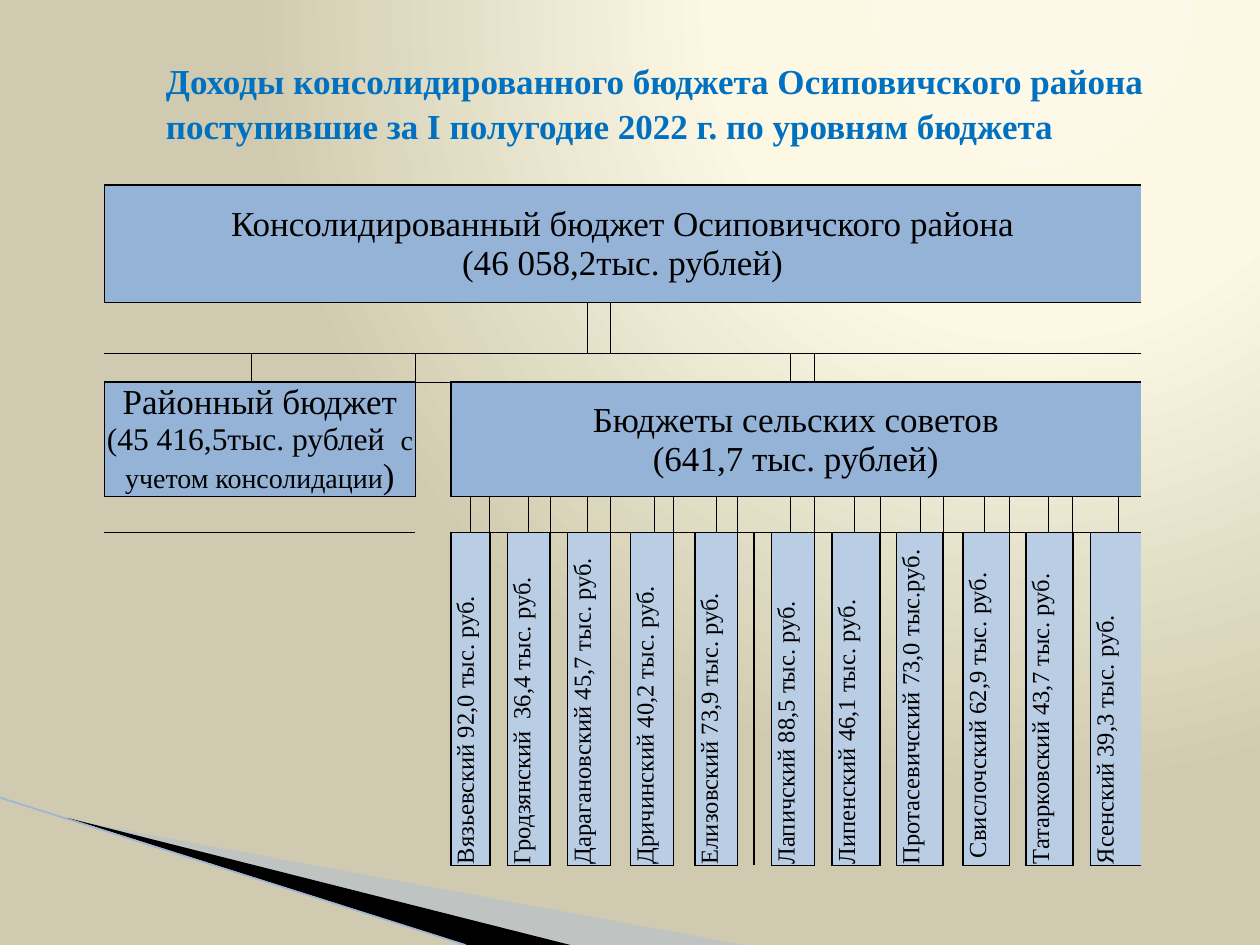
from collections import defaultdict

from lxml import etree
from pptx import Presentation
from pptx.dml.color import RGBColor
from pptx.enum.shapes import MSO_CONNECTOR as CONN
from pptx.enum.text import MSO_ANCHOR as ANCHOR, PP_ALIGN as ALIGN
from pptx.oxml import parse_xml
from pptx.oxml.ns import nsdecls, qn
from pptx.util import Pt

FONT = "Times New Roman"
BLACK = "000000"
HEAD_FILL, COUNCIL_FILL = "95B3D7", "B9CDE5"
THIN, THICK = 0.5, 1
NO_GRID_STYLE = "{2D5ABB26-0587-4C30-8999-92F81FD0307C}"

COL_WIDTHS = [84.2, 93.6, 20.2, 11.5, 10.8, 10.1, 12.2, 12.2, 10.1, 11.5, 13, 11.5,
              13.7, 10.8, 12.2, 12.2, 12.2, 9.4, 10.1, 10.8, 13.7, 10.1, 13, 14.4,
              9.4, 13.7, 13, 11.5, 12.2, 14.4, 9.4, 13, 13.7, 10.1, 15.8, 13]
ROW_HEIGHTS = [67.4, 29, 16.3, 65.5, 20.6, 190.2]
LAST_COL = len(COL_WIDTHS) - 1

COUNCILS = [
    (3, "Вязьевский 92,0 тыс. руб."),
    (6, "Гродзянский  36,4 тыс. руб."),
    (9, "Дарагановский 45,7 тыс. руб."),
    (12, "Дричинский 40,2 тыс. руб."),
    (15, "Елизовский 73,9 тыс. руб."),
    (19, "Лапичский 88,5 тыс. руб."),
    (22, "Липенский 46,1 тыс. руб."),
    (25, "Протасевичский 73,0 тыс.руб."),
    (28, " Свислочский 62,9 тыс. руб."),
    (31, "Татарковский 43,7 тыс. руб."),
    (34, "Ясенский 39,3 тыс. руб."),
]


def rgb(color):
    return RGBColor.from_string(color)


def set_background(s):
    stops = "".join(
        f'<a:gs pos="{pos}000"><a:srgbClr val="{color}"/></a:gs>'
        for pos, color in [(0, "FDF9E8"), (40, "FCF8E4"), (100, "D0CBB0")])
    s.element.cSld.insert(0, parse_xml(
        f'<p:bg {nsdecls("p", "a")}><p:bgPr><a:gradFill rotWithShape="1">'
        f'<a:gsLst>{stops}</a:gsLst><a:path path="circle">'
        '<a:fillToRect l="65000" t="0" r="0" b="98000"/></a:path></a:gradFill>'
        '<a:effectLst/></p:bgPr></p:bg>'))


def add_wedge(s, points, color, alpha=None):
    builder = s.shapes.build_freeform(*(Pt(v) for v in points[0]), scale=1)
    builder.add_line_segments([(Pt(x), Pt(y)) for x, y in points[1:]], close=True)
    sp = builder.convert_to_shape()
    sp.shadow.inherit = False
    sp.fill.solid()
    sp.fill.fore_color.rgb = rgb(color)
    sp.line.fill.background()
    if alpha:
        clr = sp._element.spPr.find(".//" + qn("a:srgbClr"))
        etree.SubElement(clr, qn("a:alpha"), val=f"{alpha}000")


def add_line(s, x1, y1, x2, y2, color, width):
    line = s.shapes.add_connector(CONN.STRAIGHT, Pt(x1), Pt(y1), Pt(x2), Pt(y2))
    line.line.color.rgb = rgb(color)
    line.line.width = Pt(width)
    etree.SubElement(line._element.spPr, qn("a:effectLst"))


def add_title(s, text):
    sp = s.shapes.add_textbox(Pt(87.8), Pt(21.6), Pt(584), Pt(72.7))
    tf = sp.text_frame
    tf.word_wrap = True
    tf.vertical_anchor = ANCHOR.MIDDLE
    p = tf.paragraphs[0]
    p.text = text
    p.line_spacing = 1.08
    style_font(p.font, 20, "0070C0")
    p.font.bold = True


def style_font(font, size, color=BLACK):
    font.name = FONT
    font.size = Pt(size)
    font.color.rgb = rgb(color)


def add_grid(s):
    """Add an unstyled table whose empty cells do not stretch the rows."""
    frame = s.shapes.add_table(len(ROW_HEIGHTS), len(COL_WIDTHS), Pt(59.6), Pt(105.6),
                               Pt(sum(COL_WIDTHS)), Pt(sum(ROW_HEIGHTS)))
    table = frame.table
    table.first_row = table.horz_banding = False
    table._tbl.tblPr.find(qn("a:tableStyleId")).text = NO_GRID_STYLE
    for col, width in zip(table.columns, COL_WIDTHS):
        col.width = Pt(width)
    for row, height in zip(table.rows, ROW_HEIGHTS):
        row.height = Pt(height)
    for cell in table.iter_cells():
        cell.margin_left = cell.margin_right = cell.margin_top = Pt(0.7)
        cell.margin_bottom = 0
        etree.SubElement(cell.text_frame.paragraphs[0]._p, qn("a:endParaRPr"), sz="800")
    return table


def fill_box(table, edges, row, first, last, lines, fill, vertical=False):
    """Merge cells into a box; each line is a list of (text, size) runs."""
    cell = table.cell(row, first)
    cell.merge(table.cell(row, last))
    cell.fill.solid()
    cell.fill.fore_color.rgb = rgb(fill)
    cell.vertical_anchor = ANCHOR.MIDDLE
    if vertical:
        cell._tc.get_or_add_tcPr().set("vert", "vert270")
    tf = cell.text_frame
    for i, runs in enumerate(lines):
        p = tf.add_paragraph() if i else tf.paragraphs[0]
        p.alignment = ALIGN.LEFT if vertical else ALIGN.CENTER
        style_font(p.font, runs[0][1])
        for text, size in runs:
            r = p.add_run()
            r.text = text
            if len(runs) > 1:
                style_font(r.font, size)
    rule_right(edges, row, first - 1, THICK)
    rule_right(edges, row, last, THICK)
    for col in range(first, last + 1):
        rule_below(edges, row - 1, col, THICK)
        rule_below(edges, row, col, THICK)


def rule_right(edges, row, col, width):
    edges[row, col]["R"] = edges[row, col + 1]["L"] = width


def rule_below(edges, row, col, width):
    edges[row, col]["B"] = edges[row + 1, col]["T"] = width


def draw_edges(table, edges):
    for row in range(len(ROW_HEIGHTS)):
        for col in range(len(COL_WIDTHS)):
            sides = edges[row, col]
            tc_pr = table.cell(row, col)._tc.get_or_add_tcPr()
            for i, side in enumerate(side for side in "LRTB" if side in sides):
                tc_pr.insert(i, parse_xml(
                    f'<a:ln{side} {nsdecls("a")} w="{Pt(sides[side])}"><a:solidFill>'
                    f'<a:srgbClr val="{BLACK}"/></a:solidFill></a:ln{side}>'))


def add_budget_tree(s):
    table = add_grid(s)
    edges = defaultdict(dict)
    fill_box(table, edges, 0, 0, LAST_COL,
             [[("Консолидированный бюджет Осиповичского района", 20)],
              [("(46 058,2тыс. рублей)", 20)]], HEAD_FILL)
    fill_box(table, edges, 3, 0, 1,
             [[("Районный бюджет", 20)],
              [("(45 416,5тыс. рублей  ", 18), ("с учетом консолидации", 16), (")", 20)]],
             HEAD_FILL)
    fill_box(table, edges, 3, 3, LAST_COL,
             [[("Бюджеты сельских советов", 20)], [("(641,7 тыс. рублей)", 20)]],
             HEAD_FILL)
    for col, text in COUNCILS:
        fill_box(table, edges, 5, col, col + 1, [[(text, 14)]], COUNCIL_FILL, vertical=True)
        rule_right(edges, 4, col, THIN)
    rule_right(edges, 5, 17, THICK)

    rule_right(edges, 1, 9, THIN)
    for col in range(1, 20):
        rule_below(edges, 1, col, THIN)
    for col in (0, 19):
        rule_right(edges, 2, col, THIN)
    draw_edges(table, edges)


def main():
    prs = Presentation()
    prs.slide_width, prs.slide_height = Pt(720), Pt(540)
    s = prs.slides.add_slide(prs.slide_layouts[6])
    set_background(s)
    add_wedge(s, [(39.6, 468.5), (425, 540), (328, 540)], "A7B9DB", alpha=40)
    add_wedge(s, [(38.2, 467.3), (326, 540), (267, 540)], BLACK)
    add_line(s, 0, 455.8, 266, 540, "9EB3D6", 0.95)
    add_budget_tree(s)
    add_title(s, "Доходы консолидированного бюджета Осиповичского района "
                 "поступившие за I полугодие 2022 г. по уровням бюджета")
    prs.save("out.pptx")


if __name__ == "__main__":
    main()
